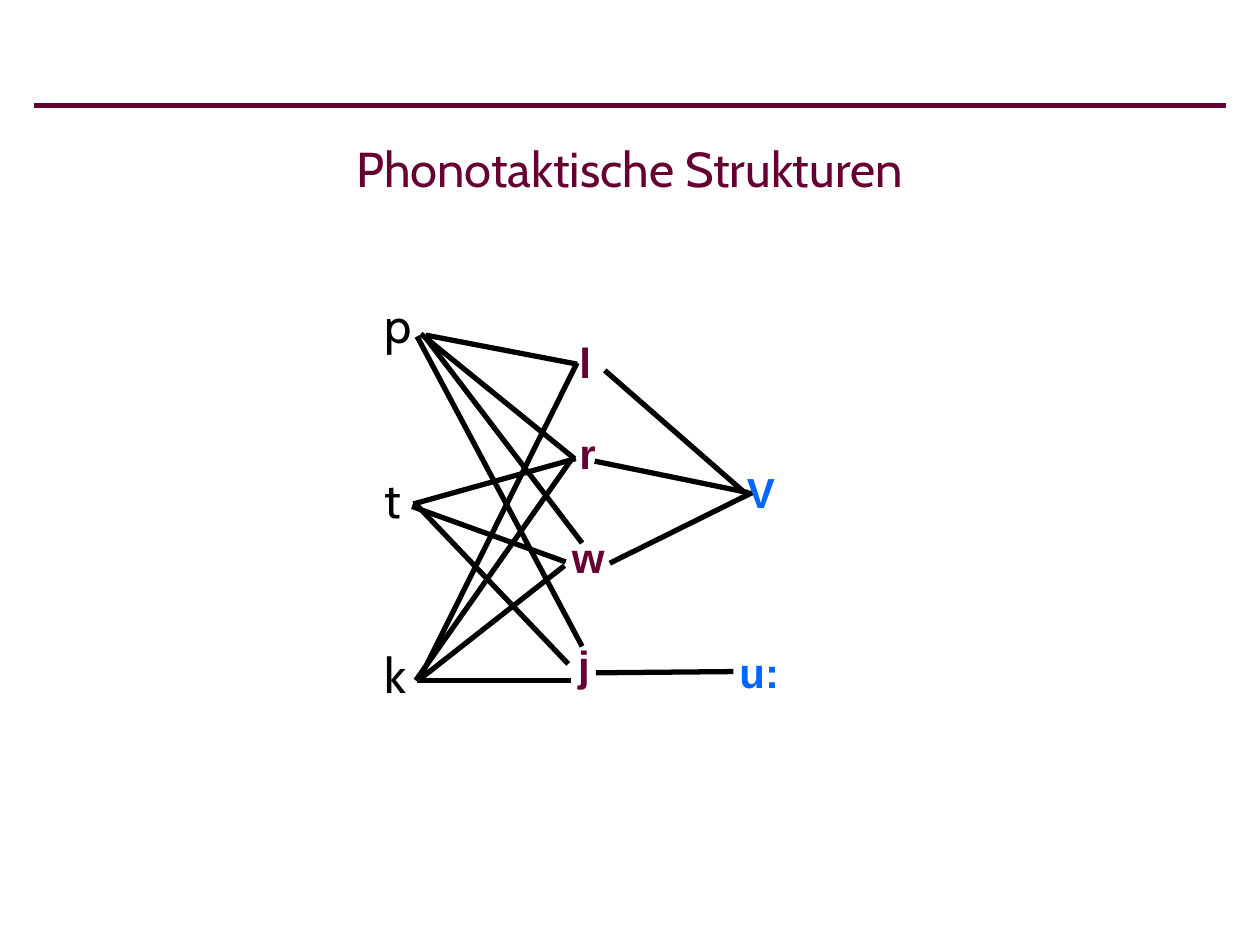
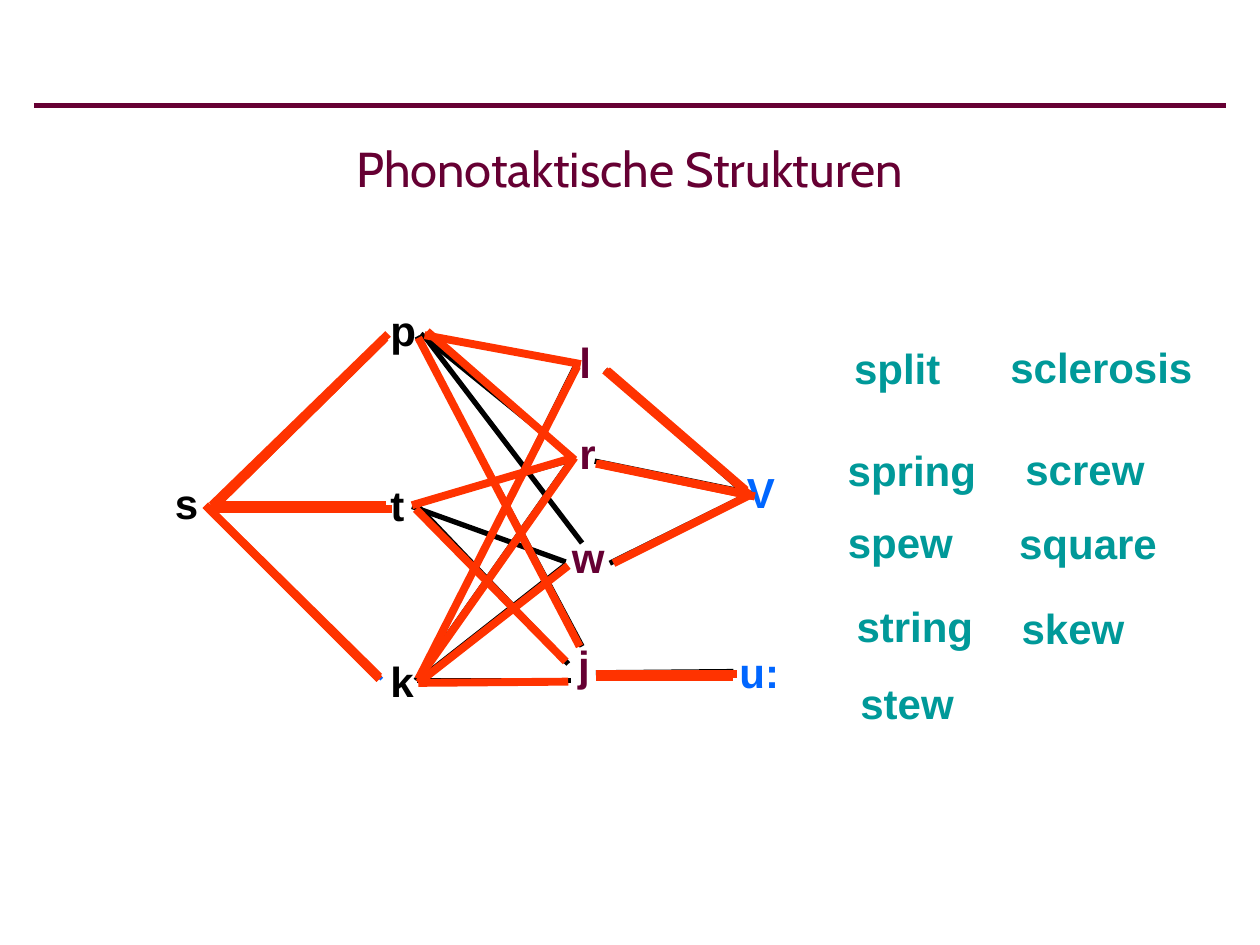
from dataclasses import dataclass
from lxml.etree import SubElement
from pptx import Presentation
from pptx.dml.color import RGBColor as Rgb
from pptx.enum.shapes import MSO_CONNECTOR as Conn
from pptx.enum.text import MSO_ANCHOR as Anchor, MSO_AUTO_SIZE as Fit, PP_ALIGN as Align
from pptx.oxml.ns import qn
from pptx.util import Inches, Pt


@dataclass(frozen=True)
class Theme:
    wine: str = "660033"
    black: str = "000000"
    blue: str = "0066FF"
    red: str = "FF3300"
    teal: str = "009999"
    head: str = "Cabin"
    body: str = "Arial"
    big: int = 28
    mid: int = 24
    thin: float = 2.25
    rule: float = 3
    bold: float = 4.5


T = Theme()
TITLE = "Phonotaktische Strukturen"
STOPS = ["p", "t", "k"]
STEP = 1.39  # vertical distance between two stops

# Sounds after the stop: text, left, top, width, colour
SOUNDS = [
    ("l", 4.5, 2.62, 0.39, T.wine),
    ("r", 4.5, 3.34, 0.39, T.wine),
    ("w", 4.44, 4.17, 0.55, T.wine),
    ("j", 4.49, 5.03, 0.39, T.wine),
    ("V", 5.83, 3.65, 0.55, T.blue),
    ("u:", 5.77, 5.08, 0.55, T.blue),
]

# Links by sound pair: x1, y1, x2, y2
LINKS = {
    "p-l": (3.38, 2.66, 4.58, 2.89),
    "p-r": (3.34, 2.65, 4.56, 3.64),
    "p-w": (3.37, 2.67, 4.62, 4.31),
    "p-j": (3.31, 2.67, 4.62, 5.13),
    "t-r": (3.28, 4, 4.57, 3.64),
    "t-w": (3.27, 4.02, 4.49, 4.46),
    "t-j": (3.29, 3.99, 4.51, 5.27),
    "k-l": (3.32, 5.41, 4.58, 2.88),
    "k-r": (3.3, 5.4, 4.54, 3.64),
    "k-w": (3.32, 5.4, 4.48, 4.49),
    "k-j": (3.31, 5.4, 4.53, 5.4),
    "l-V": (4.8, 2.94, 5.91, 3.91),
    "r-V": (4.72, 3.66, 5.94, 3.91),
    "w-V": (4.84, 4.47, 5.97, 3.91),
    "j-u:": (4.73, 5.34, 5.82, 5.33),
}
FIRST = [(1.68, 4.01, 3.06, 2.7), (1.65, 4.03, 3.08, 4.04), (1.65, 4.03, 3.03, 5.39)]

# Words: text, left, top, width, and the way each takes through the net
WORDS = [
    ("split", 6.68, 2.67, 1.12,
     [(1.68, 4.04, 3.04, 2.7), (3.37, 2.66, 4.61, 2.89), (4.8, 2.94, 5.94, 3.92)]),
    ("spring", 6.63, 3.48, 1.43,
     [(1.68, 4.04, 3.06, 2.68), (3.39, 2.63, 4.56, 3.65), (4.73, 3.68, 5.99, 3.94)]),
    ("spew", 6.63, 4.05, 1.12,
     [(1.68, 4.01, 3.08, 2.65), (3.32, 2.68, 4.6, 5.13), (4.73, 5.35, 5.85, 5.35)]),
    ("string", 6.7, 4.72, 1.17,
     [(1.68, 4.04, 3.11, 4.04), (3.27, 4.01, 4.56, 3.63), (4.75, 3.68, 5.99, 3.94)]),
    ("stew", 6.73, 5.33, 1.02,
     [(1.7, 4.01, 3.06, 4.01), (3.3, 4.04, 4.49, 5.25), (4.75, 5.37, 5.82, 5.37)]),
    ("sclerosis", 7.92, 2.66, 1.72,
     [(1.63, 4.01, 3.01, 5.39), (3.32, 5.39, 4.58, 2.91), (4.82, 2.94, 5.92, 3.89)]),
    ("screw", 8.04, 3.47, 1.24,
     [(3.32, 5.39, 4.56, 3.63), (4.75, 3.68, 5.92, 3.92)]),
    ("square", 7.99, 4.06, 1.41,
     [(1.66, 4.04, 3.01, 5.39), (3.32, 5.42, 4.51, 4.49), (4.87, 4.47, 5.97, 3.92)]),
    ("skew", 8.01, 4.73, 1.17,
     [(1.63, 4.01, 3.01, 5.37), (3.32, 5.42, 4.51, 5.41), (4.73, 5.37, 5.82, 5.37)]),
]


def write(frame, text, color=T.black, size=T.mid, font=T.body, bold=True, align=Align.JUSTIFY):
    frame.word_wrap = True
    par = frame.paragraphs[0]
    par.text, par.alignment = text, align
    face = par.runs[0].font
    face.name, face.size, face.bold = font, Pt(size), bold
    face.color.rgb = Rgb.from_string(color)


def label(shapes, text, x, y, wide, high=0.5, **style):
    box = shapes.add_textbox(*map(Inches, (x, y, wide, high)))
    write(box.text_frame, text, **style)
    box.text_frame.auto_size = Fit.SHAPE_TO_FIT_TEXT


def link(shapes, ends, color=T.black, width=T.rule):
    line = shapes.add_connector(Conn.STRAIGHT, *map(Inches, ends))
    line.line.color.rgb = Rgb.from_string(color)
    line.line.width = Pt(width)
    SubElement(line._element.spPr, qn("a:effectLst"))


def start(deck):
    """Add a slide with the shared rule and title."""
    slide = deck.slides.add_slide(deck.slide_layouts[5])
    link(slide.shapes, (0.27, 0.84, 9.73, 0.84), T.wine)
    title = slide.shapes.title
    title.left, title.top, title.width, title.height = map(Inches, (0.27, 0.95, 9.45, 0.76))
    title.text_frame.vertical_anchor = Anchor.MIDDLE
    write(title.text_frame, TITLE, color=T.wine, size=T.big, font=T.head,
          bold=False, align=Align.CENTER)
    return slide


def stops(shapes, x, y, high, **style):
    for i, text in enumerate(STOPS):
        label(shapes, text, x, y + i * STEP, 0.39, high, **style)


def net(shapes):
    for text, x, y, wide, color in SOUNDS:
        label(shapes, text, x, y, wide, color=color)
    for ends in LINKS.values():
        link(shapes, ends)


def main():
    deck = Presentation()
    deck.slide_width, deck.slide_height = Inches(10), Inches(7.5)

    slide = start(deck)
    stops(slide.shapes, 2.95, 2.29, 0.57, size=T.big, font=T.head, bold=False)
    net(slide.shapes.add_group_shape().shapes)

    slide = start(deck)
    base = slide.shapes.add_group_shape().shapes
    label(base, "s", 1.29, 3.74, 0.39)
    for ends in FIRST:
        link(base, ends, T.blue, T.thin)
    stops(base, 3, 2.37, 0.5)
    net(base)
    for text, x, y, wide, way in WORDS:
        group = slide.shapes.add_group_shape().shapes
        label(group, text, x, y, wide, color=T.teal)
        for ends in way:
            link(group, ends, T.red, T.bold)

    deck.save("out.pptx")


if __name__ == "__main__":
    main()
